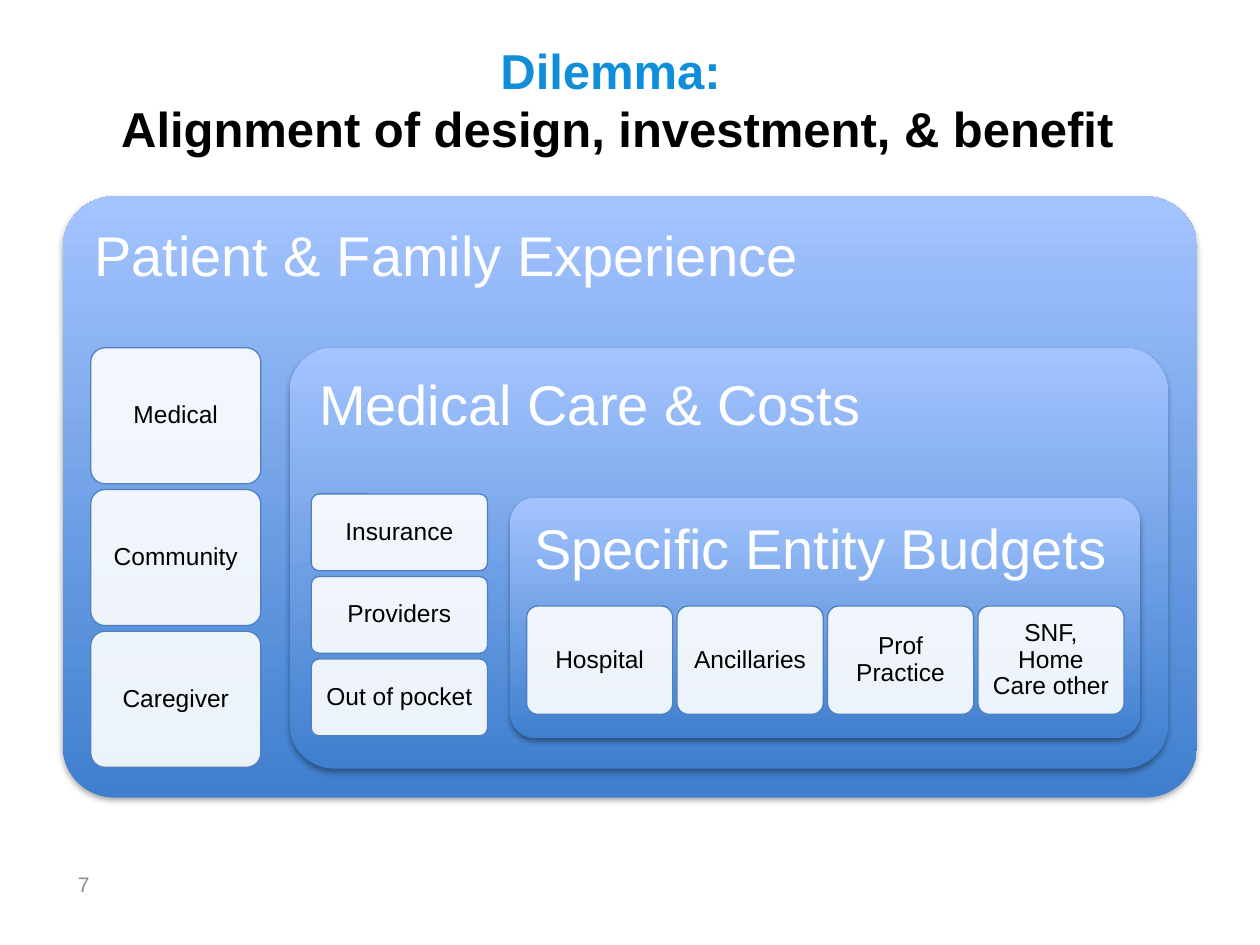
from lxml import etree
from pptx import Presentation
from pptx.dml.color import RGBColor
from pptx.enum.shapes import MSO_SHAPE
from pptx.enum.text import MSO_ANCHOR, PP_ALIGN
from pptx.oxml.ns import qn
from pptx.util import Inches, Pt

ROUNDED = MSO_SHAPE.ROUNDED_RECTANGLE
TOP, MIDDLE = MSO_ANCHOR.TOP, MSO_ANCHOR.MIDDLE
LEFT, CENTER = PP_ALIGN.LEFT, PP_ALIGN.CENTER

COLUMNS, ROWS = 100, 75
CELL = Inches(0.1)
FONT = "Arial"
COLORS = {
    "heading": "118ED9",
    "black": "000000",
    "white": "FFFFFF",
    "panel_bottom": "3F7FCE",
    "panel_top": "A4C4FF",
    "tile_line": "4F81BD",
    "page_number": "8C8C8C",
}


def color(name):
    return RGBColor.from_string(COLORS[name])


def grid(*cells):
    return [round(cell * CELL) for cell in cells]


def write_text(shape, lines, size, colors, bold=False, align=LEFT,
               anchor=MIDDLE, spacing=1.0, inset=None):
    frame = shape.text_frame
    frame.word_wrap = True
    frame.vertical_anchor = anchor
    if inset is not None:
        frame.margin_left = frame.margin_right = Inches(inset)
        frame.margin_top = frame.margin_bottom = Inches(inset)
    paragraph = frame.paragraphs[0]
    paragraph.alignment = align
    paragraph.line_spacing = spacing
    for index, (line, name) in enumerate(zip(lines, colors)):
        if index:
            paragraph.add_line_break()
        run = paragraph.add_run()
        run.text = line
        run.font.name = FONT
        run.font.size = Pt(size)
        run.font.bold = bold
        run.font.color.rgb = color(name)


def add_text(slide, box, lines, **text_format):
    write_text(slide.shapes.add_textbox(*grid(*box)), lines, **text_format)


def add_rounded(slide, box, corner):
    shape = slide.shapes.add_shape(ROUNDED, *grid(*box))
    shape.adjustments[0] = corner
    shape.shadow.inherit = False
    return shape


def add_alpha(color_element, percent):
    etree.SubElement(color_element, qn("a:alpha"), val=str(percent * 1000))


def add_shadow(shape):
    effects = shape.element.spPr.find(qn("a:effectLst"))
    shadow = etree.SubElement(
        effects, qn("a:outerShdw"), blurRad=str(Pt(3.1)), dist=str(Pt(1.8)),
        dir="5400000", rotWithShape="0")
    shadow_color = etree.SubElement(shadow, qn("a:srgbClr"), val=COLORS["black"])
    add_alpha(shadow_color, 35)


def add_panel(slide, box, title, corner=0.105):
    panel = add_rounded(slide, box, corner)
    panel.fill.gradient()
    panel.fill.gradient_angle = 90
    for stop, name in zip(panel.fill.gradient_stops, ("panel_bottom", "panel_top")):
        stop.color.rgb = color(name)
    panel.line.fill.background()
    add_shadow(panel)
    write_text(panel, [title], size=32, colors=["white"], anchor=TOP,
               spacing=0.9, inset=0.13)


def add_tiles(slide, first_box, labels, column_step=0, row_step=0):
    left, top, width, height = first_box
    for index, label in enumerate(labels):
        box = (left + index * column_step, top + index * row_step, width, height)
        tile = add_rounded(slide, box, 0.105)
        tile.fill.solid()
        tile.fill.fore_color.rgb = color("white")
        add_alpha(tile.element.spPr.find(qn("a:solidFill"))[0], 90)
        tile.line.color.rgb = color("tile_line")
        tile.line.width = Pt(0.75)
        write_text(tile, [label], size=14, colors=["black"], align=CENTER,
                   spacing=0.9, inset=0.06)


def main():
    presentation = Presentation()
    presentation.slide_width, presentation.slide_height = grid(COLUMNS, ROWS)
    slide = presentation.slides.add_slide(presentation.slide_layouts[6])

    add_text(slide, (4, 1.6, 90, 12.5),
             ["Dilemma: ", "Alignment of design, investment, & benefit"],
             size=28, colors=["heading", "black"], bold=True, align=CENTER)

    add_panel(slide, (5, 15.6, 90, 47.7), "Patient & Family Experience", corner=0.085)
    add_tiles(slide, (7.2, 27.6, 13.5, 10.8),
              ["Medical", "Community", "Caregiver"], row_step=11.25)

    add_panel(slide, (23, 27.6, 69.7, 33.4), "Medical Care & Costs")
    add_tiles(slide, (24.7, 39.2, 14, 6.1),
              ["Insurance", "Providers", "Out of pocket"], row_step=6.55)

    add_panel(slide, (40.5, 39.5, 50, 19.1), "Specific Entity Budgets")
    add_tiles(slide, (41.8, 48.1, 11.6, 8.6),
              ["Hospital", "Ancillaries", "Prof Practice", "SNF, Home Care other"],
              column_step=11.94)

    add_text(slide, (5.2, 68.1, 5.2, 4.2), ["7"], size=12, colors=["page_number"])
    presentation.save("out.pptx")


if __name__ == "__main__":
    main()
